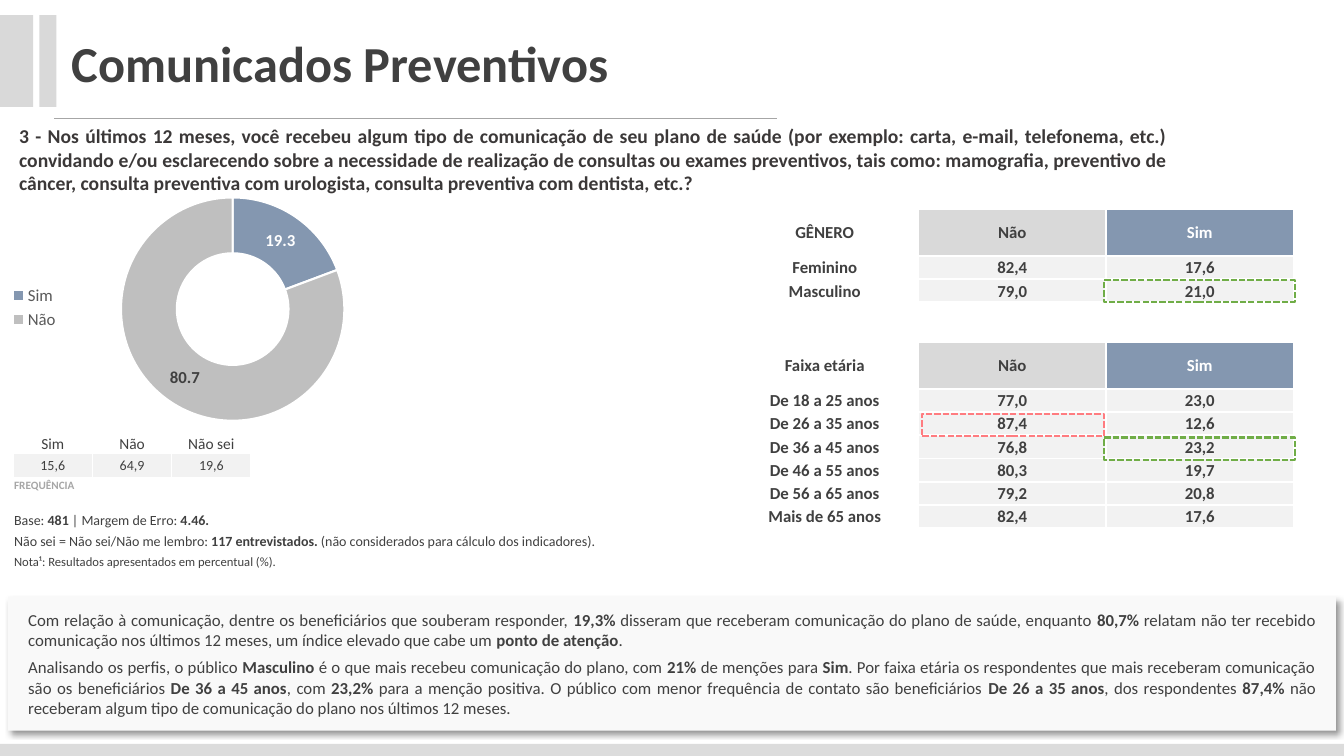
from dataclasses import dataclass
from typing import Optional

from pptx import Presentation
from pptx.chart.data import CategoryChartData
from pptx.dml.color import RGBColor
from pptx.enum.chart import XL_CHART_TYPE as ChartType, XL_LEGEND_POSITION as LegendPosition
from pptx.enum.dml import MSO_LINE_DASH_STYLE as Dash
from pptx.enum.shapes import MSO_CONNECTOR as Connector, MSO_SHAPE as Shape
from pptx.enum.text import MSO_ANCHOR as Anchor, PP_ALIGN as Align
from pptx.oxml import parse_xml
from pptx.oxml.ns import nsdecls, qn
from pptx.util import Inches, Pt

FONT = "Calibri"
DARK, WHITE, BLUE = "404040", "FFFFFF", "8497B0"
LIGHT, HEADER, RED, GREEN = "F2F2F2", "D9D9D9", "FF7C80", "70AD47"


@dataclass
class Box:
    left: float
    top: float
    width: float
    height: float
    fill: Optional[str] = None
    line: Optional[str] = None

    def lengths(self) -> tuple:
        return tuple(Inches(v) for v in (self.left, self.top, self.width, self.height))


@dataclass
class CellStyle:
    size: float
    bold: bool = False
    color: str = DARK
    fill: Optional[str] = None
    align: Align = Align.CENTER
    anchor: Anchor = Anchor.MIDDLE


def rgb(color: str) -> RGBColor:
    return RGBColor.from_string(color)


def style_font(font, size: float, color: str = DARK, bold: bool = False) -> None:
    font.name, font.size, font.bold = FONT, Pt(size), bold
    font.color.rgb = rgb(color)


def write(paragraph, marked: str, size: float, color: str = DARK, bold: bool = False,
          align: Align = Align.LEFT) -> None:
    paragraph.alignment = align
    style_font(paragraph.font, size, color, bold)
    for index, part in enumerate(marked.split("**")):
        if part:
            run = paragraph.add_run()
            run.text = part
            style_font(run.font, size, color, bold or index % 2 == 1)


def draw_box(slide, box: Box):
    shape = slide.shapes.add_shape(Shape.RECTANGLE, *box.lengths())
    shape.shadow.inherit = False
    if box.fill:
        shape.fill.solid()
        shape.fill.fore_color.rgb = rgb(box.fill)
    else:
        shape.fill.background()
    if box.line:
        shape.line.color.rgb = rgb(box.line)
        shape.line.width = Pt(1.5)
        shape.line.dash_style = Dash.SQUARE_DOT
    else:
        shape.line.fill.background()
    return shape


def draw_text(slide, box: Box, text: str, size: float, color: str, align: Align,
              inset_x: float = 0.1, inset_y: float = 0.05) -> None:
    frame = slide.shapes.add_textbox(*box.lengths()).text_frame
    frame.word_wrap = True
    frame.margin_left = frame.margin_right = Inches(inset_x)
    frame.margin_top = frame.margin_bottom = Inches(inset_y)
    write(frame.paragraphs[0], text, size, color, True, align)


def style_cell(cell, text: str, style: CellStyle, border: float) -> None:
    cell.margin_left = cell.margin_right = cell.margin_top = Inches(0.01)
    cell.margin_bottom = 0
    cell.vertical_anchor = style.anchor
    if border:
        for side in ("lnL", "lnR", "lnT", "lnB"):
            cell._tc.get_or_add_tcPr().append(parse_xml(
                f'<a:{side} {nsdecls("a")} w="{Pt(border)}"><a:solidFill>'
                f'<a:srgbClr val="{WHITE}"/></a:solidFill></a:{side}>'))
    if style.fill:
        cell.fill.solid()
        cell.fill.fore_color.rgb = rgb(style.fill)
    else:
        cell.fill.background()
    write(cell.text_frame.paragraphs[0], text, style.size, style.color, style.bold, style.align)


def draw_table(slide, box: Box, heights: list[float], rows: list[list[str]],
               styles: list[list[CellStyle]], border: float = 0) -> None:
    columns = max(len(row) for row in rows)
    table = slide.shapes.add_table(len(rows), columns, *box.lengths()).table
    table.first_row = table.horz_banding = False
    for column in table.columns:
        column.width = Inches(box.width / columns)
    for r, (height, texts) in enumerate(zip(heights, rows)):
        table.rows[r].height = Inches(height)
        for c, text in enumerate(texts):
            style_cell(table.cell(r, c), text, styles[r][c], border)
        if len(texts) < columns:
            table.cell(r, 0).merge(table.cell(r, columns - 1))


def draw_profiles(slide) -> None:
    rows = [["GÊNERO", "Não", "Sim"],
            ["Feminino", "82,4", "17,6"],
            ["Masculino", "79,0", "21,0"],
            [""],
            ["Faixa etária", "Não", "Sim"],
            ["De 18 a 25 anos", "77,0", "23,0"],
            ["De 26 a 35 anos", "87,4", "12,6"],
            ["De 36 a 45 anos", "76,8", "23,2"],
            ["De 46 a 55 anos", "80,3", "19,7"],
            ["De 56 a 65 anos", "79,2", "20,8"],
            ["Mais de 65 anos", "82,4", "17,6"]]
    label, value = CellStyle(12, True), CellStyle(12, True, fill=LIGHT)
    heading = [label, CellStyle(12, True, fill=HEADER), CellStyle(12, True, WHITE, BLUE)]
    styles = [heading if row[-1] == "Sim" else [label, value, value] for row in rows]
    heights = [0.47 if row[-1] == "Sim" else 0.23 if row[0] else 0.39 for row in rows]
    draw_table(slide, Box(7.25, 2.07, 5.58, 3.17), heights, rows, styles, 1.5)


def draw_frequency(slide) -> None:
    caption = CellStyle(8, True, "A6A6A6", align=Align.LEFT, anchor=Anchor.TOP)
    styles = [[CellStyle(11, anchor=Anchor.BOTTOM)] * 3, [CellStyle(10, fill=LIGHT)] * 3, [caption]]
    rows = [["Sim", "Não", "Não sei"], ["15,6", "64,9", "19,6"], ["FREQUÊNCIA"]]
    draw_table(slide, Box(0.13, 4.3, 2.36, 0.68), [0.2, 0.24, 0.24], rows, styles, 1)


def draw_notes(slide) -> None:
    rows = [["Base: **481** | Margem de Erro: **4.46.**"],
            ["Não sei = Não sei/Não me lembro: **117 entrevistados.** "
             "(não considerados para cálculo dos indicadores)."],
            ["Nota¹: Resultados apresentados em percentual (%)."]]
    styles = [[CellStyle(size, align=Align.LEFT, anchor=Anchor.TOP)] for size in (10, 10, 9)]
    draw_table(slide, Box(0.13, 5.07, 7.09, 0.62), [0.21] * 3, rows, styles)


def draw_summary(slide) -> None:
    panel = draw_box(slide, Box(0.08, 5.92, 13.17, 1.33, "F9F9F9"))
    panel._element.spPr.find(qn("a:effectLst")).append(parse_xml(
        f'<a:outerShdw {nsdecls("a")} blurRad="{Pt(4)}" dist="{Pt(3)}" dir="2700000" algn="tl" '
        'rotWithShape="0"><a:srgbClr val="000000"><a:alpha val="40000"/></a:srgbClr></a:outerShdw>'))
    frame = panel.text_frame
    frame.word_wrap = True
    frame.vertical_anchor = Anchor.MIDDLE
    frame.margin_left = frame.margin_right = Inches(0.2)
    frame.margin_top = frame.margin_bottom = Inches(0.04)
    write(frame.paragraphs[0],
          "Com relação à comunicação, dentre os beneficiários que souberam responder, **19,3%** "
          "disseram que receberam comunicação do plano de saúde, enquanto **80,7%** relatam não ter "
          "recebido comunicação nos últimos 12 meses, um índice elevado que cabe um "
          "**ponto de atenção**.", 12, align=Align.JUSTIFY)
    profiles = frame.add_paragraph()
    profiles.space_before = Pt(5)
    write(profiles,
          "Analisando os perfis, o público** Masculino** é o que mais recebeu comunicação do plano, "
          "com **21% **de menções para **Sim**. Por faixa etária os respondentes que mais receberam "
          "comunicação são os beneficiários **De 36 a 45 anos**, com **23,2% **para a menção "
          "positiva. O público com menor frequência de contato são beneficiários **De 26 a 35 "
          "anos**, dos respondentes **87,4% **não receberam algum tipo de comunicação do plano nos "
          "últimos 12 meses.", 12, align=Align.JUSTIFY)


def draw_answers(slide) -> None:
    data = CategoryChartData(number_format="0.0")
    data.categories = ["Sim", "Não"]
    data.add_series("Series 1", [19.3, 80.7])
    chart = slide.shapes.add_chart(ChartType.DOUGHNUT, *Box(0, 1.81, 3.98, 2.49).lengths(), data).chart
    style_font(chart.font, 10, "000000")
    chart.has_title = False
    chart.has_legend = True
    chart.legend.position = LegendPosition.LEFT
    chart.legend.include_in_layout = False
    style_font(chart.legend.font, 12, "595959")
    plot = chart.plots[0]
    plot.vary_by_categories = True
    plot._element.find(qn("c:holeSize")).set("val", "50")
    answers = plot.series[0]
    for index, color in enumerate((BLUE, "BFBFBF")):
        slice_format = answers.points[index].format
        slice_format.fill.solid()
        slice_format.fill.fore_color.rgb = rgb(color)
        slice_format.line.color.rgb = rgb(WHITE)
        slice_format.line.width = Pt(1.5)
    labels = answers.data_labels
    labels.show_value = True
    labels.show_percentage = False
    labels.number_format, labels.number_format_is_linked = "0.0", False
    style_font(labels.font, 12, WHITE, True)
    style_font(answers.points[1].data_label.font, 12, DARK, True)
    area = chart._chartSpace.chart.plotArea
    for layout in area.findall(qn("c:layout")):
        area.remove(layout)
    area.insert(0, parse_xml(
        f'<c:layout {nsdecls("c")}><c:manualLayout><c:layoutTarget val="inner"/>'
        '<c:xMode val="edge"/><c:yMode val="edge"/><c:x val="0.3"/><c:y val="0.06"/>'
        '<c:w val="0.56"/><c:h val="0.89"/></c:manualLayout></c:layout>'))


def main() -> None:
    presentation = Presentation()
    presentation.slide_width, presentation.slide_height = Inches(13.33), Inches(7.5)
    slide = presentation.slides.add_slide(presentation.slide_layouts[6])
    for band in (Box(0, 7.38, 13.33, 0.12, "DCDCDC"), Box(-0.01, 0.15, 0.34, 0.91, HEADER),
                 Box(0.39, 0.15, 0.17, 0.91, HEADER)):
        draw_box(slide, band)
    rule = slide.shapes.add_connector(
        Connector.STRAIGHT, Inches(0.54), Inches(1.17), Inches(7.71), Inches(1.17))
    rule.line.color.rgb = rgb("A6A6A6")
    rule.line.width = Pt(0.5)
    rule._element.spPr.append(parse_xml(f'<a:effectLst {nsdecls("a")}/>'))
    draw_text(slide, Box(0.08, 1.17, 11.61, 0.82),
              "3 - Nos últimos 12 meses, você recebeu algum tipo de comunicação de seu plano de saúde "
              "(por exemplo: carta, e-mail, telefonema, etc.) convidando e/ou esclarecendo sobre a "
              "necessidade de realização de consultas ou exames preventivos, tais como: mamografia, "
              "preventivo de câncer, consulta preventiva com urologista, consulta preventiva com "
              "dentista, etc.?", 14, "3B3838", Align.JUSTIFY, 0.11, 0.06)
    draw_profiles(slide)
    draw_frequency(slide)
    draw_notes(slide)
    draw_text(slide, Box(0.61, 0.27, 5.81, 0.71), "Comunicados Preventivos", 36, DARK, Align.LEFT)
    draw_summary(slide)
    for highlight in (Box(9.14, 4.11, 1.81, 0.22, line=RED), Box(10.95, 4.34, 1.89, 0.22, line=GREEN),
                      Box(10.95, 2.78, 1.89, 0.22, line=GREEN)):
        draw_box(slide, highlight)
    draw_answers(slide)
    presentation.save("out.pptx")


if __name__ == "__main__":
    main()
